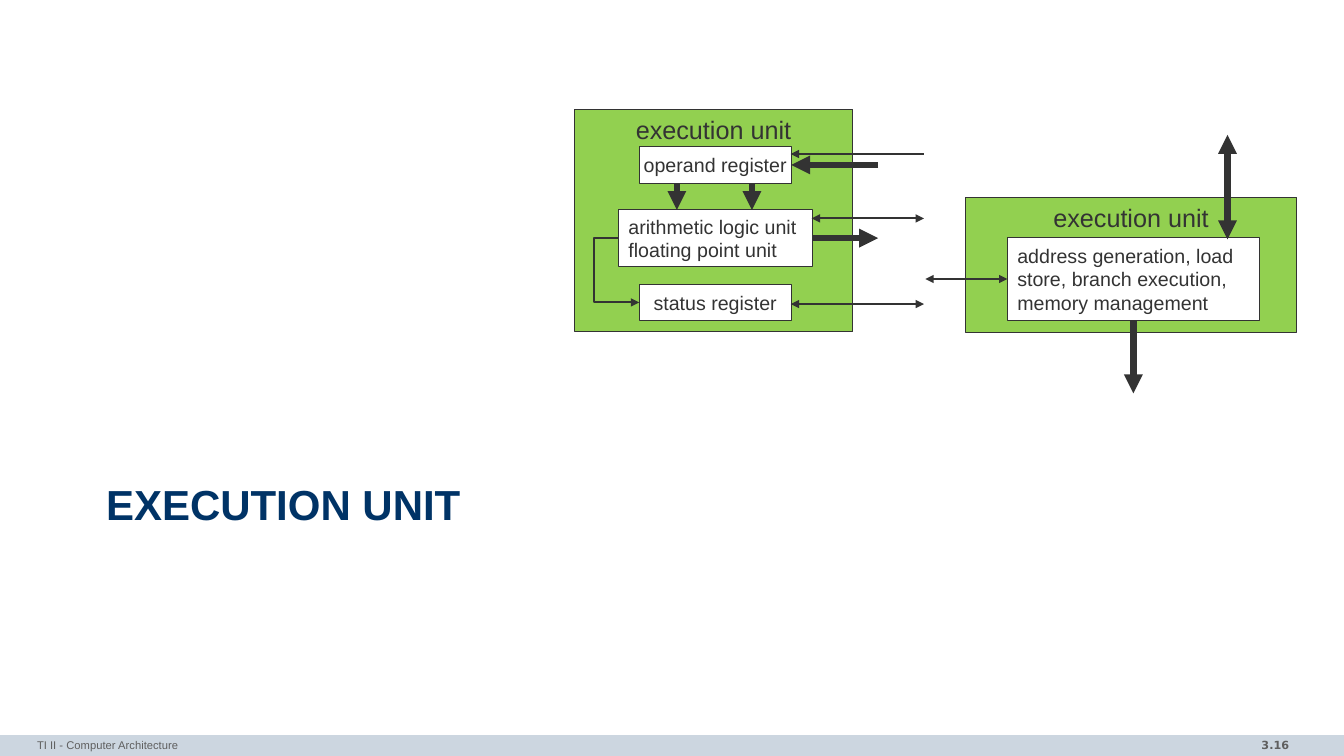
import pptx
import pptx.util
import pptx.dml.color
import pptx.enum.shapes
import pptx.enum.text
import pptx.oxml
import pptx.oxml.ns

Pt = pptx.util.Pt
SHAPE = pptx.enum.shapes.MSO_SHAPE
CONNECTOR = pptx.enum.shapes.MSO_CONNECTOR
ALIGN = pptx.enum.text.PP_ALIGN
ANCHOR = pptx.enum.text.MSO_ANCHOR

COLORS = {
    "ink": "333333",
    "unit": "92D050",
    "block": "FFFFFF",
    "title": "003366",
    "bar": "CCD6E0",
    "footer": "5F5F5F",
}
BOTTOM, LEFT, RIGHT = 2, 1, 3
THICK, THIN = 4.5, 1.5


class SlideBuilder:
    font = "Arial"

    def __init__(self, presentation):
        self.slide = presentation.slides.add_slide(presentation.slide_layouts[5])
        self.shapes = self.slide.shapes

    def color(self, name):
        return pptx.dml.color.RGBColor.from_string(COLORS[name])

    def add_text(self, shape, lines, size, color, align=ALIGN.LEFT, anchor=ANCHOR.MIDDLE,
                 side=0, top=3.6, bold=False, font=None, spacing=None):
        """Fill a shape with one paragraph per line; side and top are insets."""
        frame = shape.text_frame
        frame.word_wrap = True
        frame.auto_size = pptx.enum.text.MSO_AUTO_SIZE.NONE
        frame.vertical_anchor = anchor
        frame.margin_left = frame.margin_right = Pt(side)
        frame.margin_top = frame.margin_bottom = Pt(top)
        for index, line in enumerate(lines):
            paragraph = frame.add_paragraph() if index else frame.paragraphs[0]
            paragraph.alignment = align
            if spacing:
                paragraph.line_spacing = spacing
            run = paragraph.add_run()
            run.text = line
            run.font.name = font or self.font
            run.font.size = Pt(size)
            run.font.bold = bold
            run.font.color.rgb = self.color(color)

    def title(self, text, left, top, width, height):
        title = self.shapes.title
        title.left, title.top, title.width, title.height = map(Pt, (left, top, width, height))
        self.add_text(title, [text], 30, "title", anchor=ANCHOR.TOP, top=0, bold=True, spacing=0.85)

    def label(self, text, left, top, width, height, **style):
        box = self.shapes.add_textbox(*map(Pt, (left, top, width, height)))
        self.add_text(box, [text], 8, "footer", **style)

    def box(self, left, top, width, height, fill, outline="ink", kind=SHAPE.RECTANGLE):
        shape = self.shapes.add_shape(kind, *map(Pt, (left, top, width, height)))
        shape.shadow.inherit = False
        shape.fill.solid()
        shape.fill.fore_color.rgb = self.color(fill)
        if outline:
            shape.line.color.rgb = self.color(outline)
            shape.line.width = Pt(0.75)
        else:
            shape.line.fill.background()
        return shape

    def unit(self, left, top, width, height):
        panel = self.box(left, top, width, height, "unit", kind=SHAPE.FLOWCHART_PROCESS)
        self.add_text(panel, ["execution unit"], 18, "ink", ALIGN.CENTER, ANCHOR.TOP)

    def block(self, lines, left, top, width, height):
        """White block; a single line is centred, several start at the left."""
        shape = self.box(left, top, width, height, "block")
        if len(lines) == 1:
            self.add_text(shape, lines, 14, "ink", ALIGN.CENTER)
        else:
            self.add_text(shape, lines, 14, "ink", side=7.2)
        return shape

    def arrow(self, start, end, width, heads=("tail",), begin=None, finish=None, bend=None):
        """Draw an arrow; begin and finish are (shape, site), bend is the elbow's share of its width."""
        kind = CONNECTOR.STRAIGHT if bend is None else CONNECTOR.ELBOW
        connector = self.shapes.add_connector(kind, *map(Pt, start + end))
        if begin:
            connector.begin_connect(*begin)
        if finish:
            connector.end_connect(*finish)
        connector.line.width = Pt(width)
        connector.line.color.rgb = self.color("ink")
        line = connector.line._get_or_add_ln()
        for head in ("head", "tail"):
            if head in heads:
                self.add_element(line, f"a:{head}End").set("type", "triangle")
        properties = connector._element.spPr
        self.add_element(properties, "a:effectLst")
        if bend is not None:
            adjustments = properties.find(".//" + pptx.oxml.ns.qn("a:avLst"))
            guide = self.add_element(adjustments, "a:gd")
            guide.set("name", "adj1")
            guide.set("fmla", f"val {round(bend * 100000)}")

    def add_element(self, parent, tag):
        element = pptx.oxml.parse_xml(f"<{tag} {pptx.oxml.ns.nsdecls('a')}/>")
        parent.append(element)
        return element


def main():
    presentation = pptx.Presentation()
    presentation.slide_width, presentation.slide_height = Pt(960), Pt(540)
    builder = SlideBuilder(presentation)
    both = ("head", "tail")

    builder.box(0, 525, 960, 15, "bar", outline=None)
    builder.label("3.16", 799, 524, 129, 16.5, align=ALIGN.RIGHT, side=7.2,
                  bold=True, font="DejaVu Sans")
    builder.label("TI II - Computer Architecture", 26.5, 524, 628, 16)
    builder.title("EXECUTION UNIT", 75.8, 347, 816, 107)

    builder.unit(410.4, 78.2, 198.6, 158.6)
    arithmetic = builder.block(["arithmetic logic unit", "floating point unit"],
                               441.8, 149.6, 138.6, 41)
    builder.block(["status register"], 456.6, 203, 108.6, 26)
    operand = builder.block(["operand register"], 456.6, 104.6, 108.6, 26.4)
    builder.arrow((627.2, 117.8), (565.2, 117.8), THICK, finish=(operand, RIGHT))
    builder.arrow((580.4, 170.1), (627.2, 170.1), THICK, begin=(arithmetic, RIGHT))
    for x in (483.5, 537.1):
        builder.arrow((x, 131), (x, 150), THICK)
    builder.arrow((441.8, 170.1), (456.6, 216), THIN, bend=-1.2)
    for left, y, heads in ((564.8, 217.2, both), (579.8, 156, both), (564.8, 110, ("head",))):
        builder.arrow((left, y), (660, y), THIN, heads)

    builder.unit(689.6, 141, 236.6, 96.4)
    address = builder.block(
        ["address generation, load", "store, branch execution,", "memory management"],
        719.6, 169.6, 180, 59.4)
    builder.arrow((809.6, 229), (809.6, 281), THICK, begin=(address, BOTTOM))
    builder.arrow((661, 199.3), (719.6, 199.3), THIN, both, finish=(address, LEFT))
    builder.arrow((876.8, 96.4), (876.8, 171), THICK, both)

    presentation.save("out.pptx")


if __name__ == "__main__":
    main()
